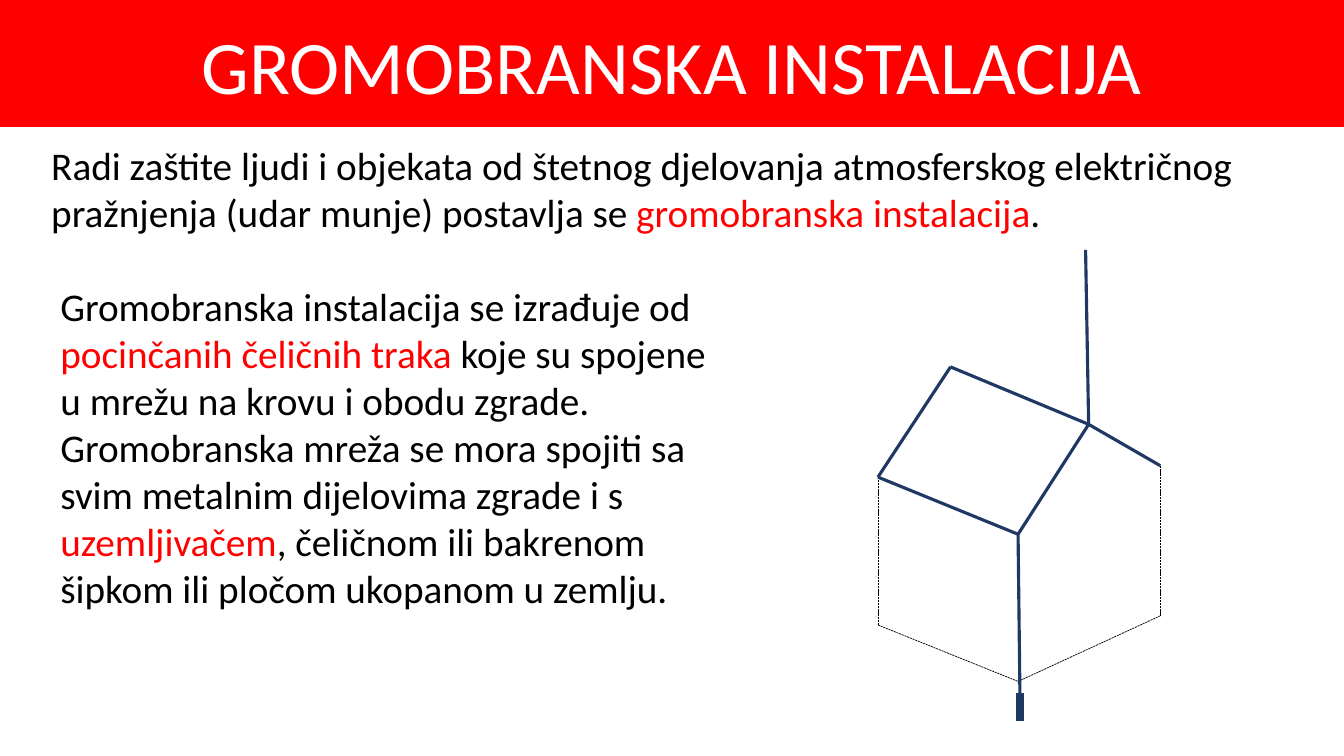
from pptx import Presentation
from pptx.dml.color import RGBColor
from pptx.enum.dml import MSO_LINE_DASH_STYLE as DASH
from pptx.enum.shapes import MSO_CONNECTOR as CONN, MSO_SHAPE as SHAPE
from pptx.enum.text import MSO_ANCHOR as ANCHOR, MSO_AUTO_SIZE as AUTO, PP_ALIGN as ALIGN
from pptx.oxml.ns import qn
from pptx.util import Inches, Pt
from lxml.etree import SubElement

COLORS = {"red": "FF0000", "black": "000000", "white": "FFFFFF", "navy": "203864"}
COLS, ROWS = 80, 45

# Corners of the house, in columns and rows
HOUSE = {
    "base_left": (52.26, 37.2), "base_front": (60.6, 40.56), "base_right": (69.06, 36.66),
    "eave_left": (52.26, 28.4), "eave_front": (60.6, 31.8), "eave_right": (69.06, 27.72),
    "ridge_back": (56.58, 21.84), "ridge_front": (64.8, 25.26),
    "mast_top": (64.62, 14.88), "lead_end": (60.72, 42.12),
    "rod_top": (60.72, 41.28), "rod_end": (60.72, 42.9),
}
WALLS = [("base_left", "base_front"), ("base_right", "base_front"),
         ("eave_front", "base_front"), ("eave_right", "base_right"),
         ("eave_left", "base_left")]
ROOF = [("eave_right", "ridge_front"), ("eave_front", "eave_left"),
        ("ridge_front", "ridge_back"), ("ridge_back", "eave_left"),
        ("ridge_front", "eave_front")]
CONDUCTORS = [("lead_end", "eave_front"), ("ridge_front", "mast_top")]

INTRO = [[("Radi zaštite ljudi i objekata od štetnog djelovanja atmosferskog "
           "električnog pražnjenja (udar munje) postavlja se ", "black"),
          ("gromobranska instalacija", "red"), (".", "black")]]
DETAILS = [
    [("Gromobranska instalacija se izrađuje od ", "black"),
     ("pocinčanih čeličnih traka ", "red"),
     ("koje su spojene u mrežu na krovu i obodu zgrade.", "black")],
    [("Gromobranska mreža se mora spojiti sa svim metalnim dijelovima zgrade i s ", "black"),
     ("uzemljivačem", "red"),
     (", čeličnom ili bakrenom šipkom ili pločom ukopanom u zemlju.", "black")],
]


class Deck:
    font = "Calibri"

    def __init__(self):
        self.prs = Presentation()
        self.prs.slide_width, self.prs.slide_height = Inches(13.33), Inches(7.5)
        self.s = self.prs.slides.add_slide(self.prs.slide_layouts[6])

    def at(self, col, row):
        """Turn grid units into slide lengths."""
        return (round(self.prs.slide_width * col / COLS),
                round(self.prs.slide_height * row / ROWS))

    def color(self, name):
        return RGBColor.from_string(COLORS[name])

    def band(self, col, row, width, height, fill):
        sp = self.s.shapes.add_shape(SHAPE.RECTANGLE, *self.at(col, row), *self.at(width, height))
        sp.shadow.inherit = False
        sp.fill.solid()
        sp.fill.fore_color.rgb = self.color(fill)
        sp.line.fill.background()

    def text(self, col, row, width, height, paragraphs, size, align=ALIGN.LEFT, fill=None):
        """Add a text box; each paragraph is a list of (text, color) runs."""
        sp = self.s.shapes.add_textbox(*self.at(col, row), *self.at(width, height))
        if fill:
            sp.fill.solid()
            sp.fill.fore_color.rgb = self.color(fill)
        tf = sp.text_frame
        tf.word_wrap = True
        tf.auto_size = AUTO.SHAPE_TO_FIT_TEXT
        tf.vertical_anchor = ANCHOR.TOP
        for i, runs in enumerate(paragraphs):
            p = tf.add_paragraph() if i else tf.paragraphs[0]
            p.alignment = align
            p.font.name, p.font.size = self.font, Pt(size)
            for words, color in runs:
                r = p.add_run()
                r.text = words
                r.font.color.rgb = self.color(color)

    def wires(self, edges, color, width, dash=None, group=None):
        """Draw house edges into a group, and return the group."""
        group = group or self.s.shapes.add_group_shape()
        for start, end in edges:
            line = group.shapes.add_connector(
                CONN.STRAIGHT, *self.at(*HOUSE[start]), *self.at(*HOUSE[end]))
            line.line.color.rgb = self.color(color)
            line.line.width = Pt(width)
            if dash:
                line.line.dash_style = dash
            SubElement(line._element.spPr, qn("a:effectLst"))
        return group


def main():
    deck = Deck()
    deck.band(0, 0, COLS, 7.56, "red")
    deck.text(2.46, 8.1, 74.94, 6.24, INTRO, 28)
    deck.wires(WALLS + ROOF, "black", 0.5, DASH.SQUARE_DOT)
    installation = deck.wires(ROOF + CONDUCTORS, "navy", 2.25)
    deck.wires([("rod_end", "rod_top")], "navy", 6, group=installation)
    deck.text(3, 16.5, 41.28, 20.4, DETAILS, 28)
    deck.text(0, 0.84, COLS, 6.06, [[("GROMOBRANSKA INSTALACIJA", "white")]], 54,
              ALIGN.CENTER, "red")
    deck.prs.save("out.pptx")


if __name__ == "__main__":
    main()
